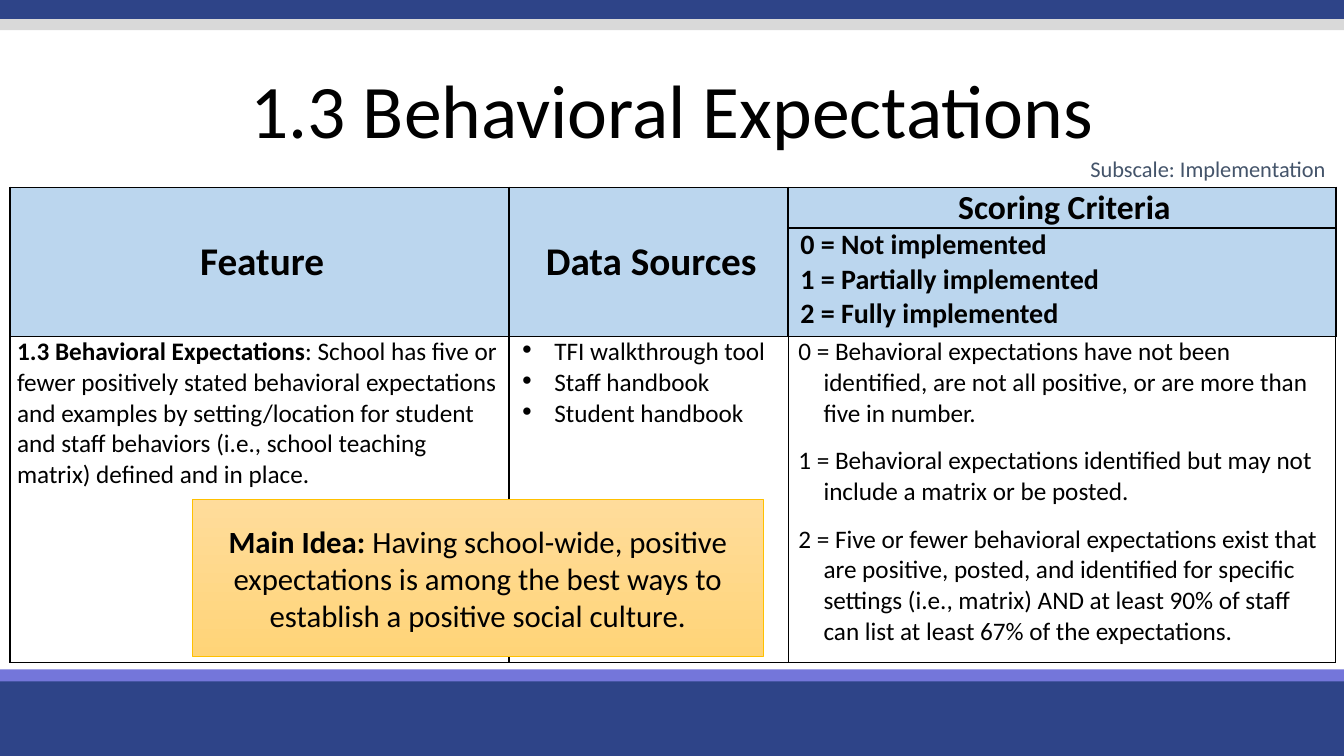
import pptx
import pptx.util
import pptx.dml.color
import pptx.enum.shapes
import pptx.enum.text
import pptx.oxml.ns
import lxml.etree

COLORS = {
    "navy": "2E4488", "violet": "7476DA", "gray": "D9D9D9", "black": "000000",
    "white": "FFFFFF", "header": "BBD6EE", "slate": "44546A", "gold": "FFC000",
    "cream": "FFDC9B", "amber": "FFD478",
}
COLS, ROWS = 133.33, 75
ALIGN = pptx.enum.text.PP_ALIGN
MIDDLE = pptx.enum.text.MSO_ANCHOR.MIDDLE
TOP = pptx.enum.text.MSO_ANCHOR.TOP


def rgb(name):
    return pptx.dml.color.RGBColor.from_string(COLORS[name])


def child(parent, tag, **attrs):
    return lxml.etree.SubElement(parent, pptx.oxml.ns.qn(tag), attrs)


def write(tf, paragraphs, size=18, color="black", bold=False, align=ALIGN.LEFT,
          margin=0, hanging=0, bullet=None, gap=0, line=None):
    for i, runs in enumerate(paragraphs):
        p = tf.paragraphs[0] if i == 0 else tf.add_paragraph()
        pPr = p._p.get_or_add_pPr()
        pPr.set("marL", str(pptx.util.Inches(margin)))
        pPr.set("indent", str(pptx.util.Inches(-hanging)))
        if bullet:
            clr = child(pPr, "a:buClr")
            child(clr, "a:srgbClr", val=COLORS[color])
            child(pPr, "a:buChar", char=bullet)
        p.alignment = align
        if line:
            p.line_spacing = line
        if i and gap:
            p.space_before = pptx.util.Pt(gap)
        for text, heavy in [(runs, bold)] if isinstance(runs, str) else runs:
            r = p.add_run()
            r.text = text
            r.font.name = "Calibri"
            r.font.size = pptx.util.Pt(size)
            r.font.bold = heavy
            r.font.color.rgb = rgb(color)


class Deck:
    def __init__(self):
        self.prs = pptx.Presentation()
        self.prs.slide_width = pptx.util.Inches(13.33)
        self.prs.slide_height = pptx.util.Inches(7.5)
        self.s = self.prs.slides.add_slide(self.prs.slide_layouts[6])

    def x(self, cols):
        return round(self.prs.slide_width * cols / COLS)

    def y(self, rows):
        return round(self.prs.slide_height * rows / ROWS)

    def place(self, x, y, w, h):
        return self.x(x), self.y(y), self.x(w), self.y(h)

    def rect(self, x, y, w, h, fill):
        kind = pptx.enum.shapes.MSO_SHAPE.RECTANGLE
        sp = self.s.shapes.add_shape(kind, *self.place(x, y, w, h))
        sp.shadow.inherit = False
        sp.fill.solid()
        sp.fill.fore_color.rgb = rgb(fill)
        sp.line.fill.background()
        return sp

    def text(self, x, y, w, h, paragraphs, anchor=TOP, **style):
        tf = self.s.shapes.add_textbox(*self.place(x, y, w, h)).text_frame
        tf.word_wrap = True
        tf.vertical_anchor = anchor
        write(tf, paragraphs, **style)

    def callout(self, x, y, w, h, paragraphs, **style):
        sp = self.rect(x, y, w, h, "cream")
        sp.fill.gradient()
        sp.fill.gradient_angle = 270
        for stop, name in zip(sp.fill.gradient_stops, ("cream", "amber")):
            stop.color.rgb = rgb(name)
        sp.line.color.rgb = rgb("gold")
        sp.line.width = pptx.util.Pt(0.75)
        sp.text_frame.word_wrap = True
        sp.text_frame.vertical_anchor = MIDDLE
        write(sp.text_frame, paragraphs, **style)

    def table(self, x, y, widths, heights, fill, border):
        frame = self.s.shapes.add_table(
            len(heights), len(widths), *self.place(x, y, sum(widths), sum(heights)))
        tbl = frame.table
        tbl.first_row = tbl.horz_banding = False
        for col, w in zip(tbl.columns, widths):
            col.width = self.x(w)
        for row, h in zip(tbl.rows, heights):
            row.height = self.y(h)
        for i, row in enumerate(tbl.rows):
            for c in row.cells:
                c.margin_left = c.margin_right = pptx.util.Inches(0.07)
                c.margin_top = c.margin_bottom = 0
                bottom = 1 if i == len(heights) - 1 else border
                self.borders(c, L=border, R=border, T=border, B=bottom)
                c.fill.solid()
                c.fill.fore_color.rgb = rgb(fill)
        return tbl

    def borders(self, c, **sides):
        tcPr = c._tc.get_or_add_tcPr()
        for side, width in sides.items():
            ln = child(tcPr, "a:ln" + side, w=str(pptx.util.Pt(width)))
            child(child(ln, "a:solidFill"), "a:srgbClr", val=COLORS["black"])

    def cell(self, c, paragraphs, anchor=TOP, **style):
        c.vertical_anchor = anchor
        write(c.text_frame, paragraphs, **style)


def main():
    d = Deck()
    for y, h, fill in [(67, 8, "navy"), (66.4, 1.2, "violet"),
                       (-0.3, 2.2, "navy"), (1.9, 1.1, "gray")]:
        d.rect(0, y, COLS, h, fill)

    d.text(0, 7.3, COLS, 8.1, ["1.3 Behavioral Expectations"], anchor=MIDDLE,
           size=54, align=ALIGN.CENTER, line=0.9)

    widths = (49.5, 27.7, 54.3)
    head = d.table(1, 18.6, widths, (4.05, 10.75), "header", 1.5)
    for col in (0, 1):
        head.cell(0, col).merge(head.cell(1, col))
    heading = dict(bold=True, margin=0.36, hanging=0.31)
    for col, (title, size) in enumerate(
            [("Feature", 28), ("Data Sources", 28), ("Scoring Criteria", 24)]):
        d.cell(head.cell(0, col), [title], anchor=MIDDLE, size=size,
               align=ALIGN.CENTER, **heading)
    levels = ("Not", "Partially", "Fully")
    d.cell(head.cell(1, 2), [f"{n} = {level} implemented" for n, level in enumerate(levels)],
           size=20, **heading)

    body = d.table(1, 33.4, widths, (32.3,), "white", 1)
    feature, sources, scoring = body.rows[0].cells
    d.cell(feature, [[
        ("1.3 Behavioral Expectations", True),
        (": School has five or fewer positively stated behavioral expectations and "
         "examples by setting/location for student and staff behaviors (i.e., school "
         "teaching matrix) defined and in place.", False)]])
    d.cell(sources, ["TFI walkthrough tool", "Staff handbook", "Student handbook"],
           bullet="∙", margin=0.38, hanging=0.35)
    d.cell(scoring, [
        "0 = Behavioral expectations have not been identified, are not all positive, "
        "or are more than five in number.",
        "1 = Behavioral expectations identified but may not include a matrix or be posted.",
        "2 = Five or fewer behavioral expectations exist that are positive, posted, and "
        "identified for specific settings (i.e., matrix) AND at least 90% of staff can "
        "list at least 67% of the expectations."],
        margin=0.28, hanging=0.25, gap=12)

    d.callout(19.1, 49.6, 56.6, 15.5, [[
        ("Main Idea: ", True),
        ("Having school-wide, positive expectations is among the best ways to "
         "establish a positive social culture.", False)]],
        size=22, align=ALIGN.CENTER)
    d.text(100.8, 14.9, 31.7, 3.7, ["Subscale: Implementation"],
           size=16, color="slate", align=ALIGN.RIGHT)
    d.prs.save("out.pptx")


if __name__ == "__main__":
    main()
